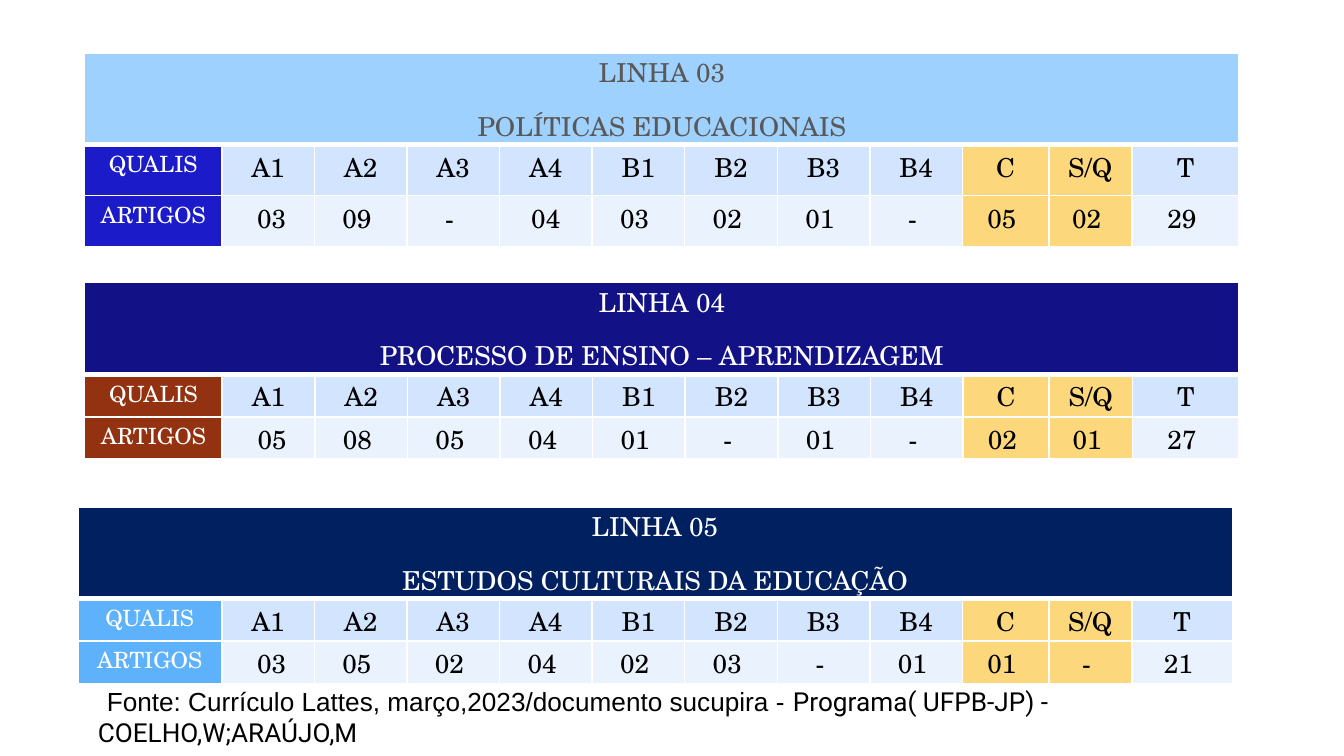
from dataclasses import dataclass

from lxml.etree import SubElement
from pptx import Presentation
from pptx.dml.color import RGBColor
from pptx.enum.text import MSO_AUTO_SIZE, PP_ALIGN
from pptx.oxml.ns import qn
from pptx.util import Cm, Pt

TABLE_FONT = "TeX Gyre Schola"
GRADES = ["A1", "A2", "A3", "A4", "B1", "B2", "B3", "B4", "C", "S/Q", "T"]
HIGHLIGHTED = ("C", "S/Q")
TABLE_WIDTH = 21.82
GRADE_WIDTHS = [1.75] * 8 + [1.63, 1.57]
TITLE_HEIGHT = 1.72
SIDE_MARGIN = 0.16
VALUE_SHIFT = 0.14


@dataclass
class ResearchLine:
    """Content and look of one research line's table."""
    titles: list
    counts: list
    left: float
    top: float
    label_width: float
    row_height: float
    title_fill: str
    title_color: str
    label_fill: str
    centred_grades: tuple = ()


RESEARCH_LINES = [
    ResearchLine(["LINHA 03", "POLÍTICAS EDUCACIONAIS"],
                 ["03", "09", "-", "04", "03", "02", "01", "-", "05", "02", "29"],
                 1.6, 1.0, 2.59, 0.96, "9ED1FD", "595959", "1B1BC9", ("A4",)),
    ResearchLine(["LINHA 04", "PROCESSO DE ENSINO – APRENDIZAGEM"],
                 ["05", "08", "05", "04", "01", "-", "01", "-", "02", "01", "27"],
                 1.6, 5.34, 2.6, 0.8, "121286", "FFFFFF", "923210"),
    ResearchLine(["LINHA 05", "ESTUDOS CULTURAIS DA EDUCAÇÃO"],
                 ["03", "05", "02", "04", "02", "03", "-", "01", "01", "-", "21"],
                 1.47, 9.58, 2.72, 0.8, "002060", "FFFFFF", "5EB2FC"),
]


def rgb(value):
    """Turn a hex string into a colour."""
    return RGBColor.from_string(value)


def format_span(span, font, size, color):
    """Set the font, size and colour of a run."""
    span.font.name = font
    span.font.size = Pt(size)
    span.font.bold = False
    span.font.color.rgb = rgb(color)


def set_borders(cell, bottom=1):
    """Give a cell white borders, with a chosen bottom width in points."""
    properties = cell._tc.get_or_add_tcPr()
    for side, width in (("L", 1), ("R", 1), ("T", 1), ("B", bottom)):
        line = SubElement(properties, qn(f"a:ln{side}"), w=str(Pt(width)))
        fill = SubElement(line, qn("a:solidFill"))
        SubElement(fill, qn("a:srgbClr"), val="FFFFFF")


def style_cell(cell, fill, bottom=1):
    """Set the margins, borders and fill of a cell."""
    cell.margin_left = cell.margin_right = Cm(SIDE_MARGIN)
    cell.margin_top = cell.margin_bottom = 0
    set_borders(cell, bottom)
    cell.fill.solid()
    cell.fill.fore_color.rgb = rgb(fill)


def write_cell(cell, text, size, color, spacing=None):
    """Write centred paragraphs in a cell."""
    cell.text_frame.text = text
    for para in cell.text_frame.paragraphs:
        para.alignment = PP_ALIGN.CENTER
        para.space_after = Pt(8)
        para.line_spacing = spacing
        for span in para.runs:
            format_span(span, TABLE_FONT, size, color)


def fill_row(table, row, label, values, line, fill):
    """Fill one labelled row of grades or counts."""
    label_cell = table.cell(row, 0)
    style_cell(label_cell, line.label_fill)
    write_cell(label_cell, label, 12, "FFFFFF", 1.07)
    for column, (grade, value) in enumerate(zip(GRADES, values), start=1):
        cell = table.cell(row, column)
        style_cell(cell, "FDD77C" if grade in HIGHLIGHTED else fill)
        write_cell(cell, value, 14, "000000", 1.07)


def shift_counts(table, line):
    """Move the first count slightly right and the others slightly left."""
    wide_margin = Cm(SIDE_MARGIN + VALUE_SHIFT)
    for column, grade in enumerate(GRADES, start=1):
        cell = table.cell(2, column)
        if column == 1:
            cell.margin_left = wide_margin
        elif grade not in line.centred_grades:
            cell.margin_right = wide_margin


def add_line_table(slide, line):
    """Add the table of one research line."""
    heights = [TITLE_HEIGHT, line.row_height, line.row_height]
    widths = [line.label_width, *GRADE_WIDTHS]
    widths.append(TABLE_WIDTH - sum(widths))
    frame = slide.shapes.add_table(len(heights), len(widths), Cm(line.left), Cm(line.top),
                                   Cm(TABLE_WIDTH), Cm(sum(heights)))
    table = frame.table
    table.first_row = table.horz_banding = False
    for column, width in zip(table.columns, widths):
        column.width = Cm(width)
    for row, height in zip(table.rows, heights):
        row.height = Cm(height)
    for cell in table.rows[0].cells:
        style_cell(cell, line.title_fill, bottom=3)
    title_cell = table.cell(0, 0)
    title_cell.merge(table.cell(0, len(widths) - 1))
    write_cell(title_cell, "\n".join(line.titles), 14, line.title_color)
    fill_row(table, 1, "QUALIS", GRADES, line, "D2E4FE")
    fill_row(table, 2, "ARTIGOS", line.counts, line, "EAF2FE")
    shift_counts(table, line)


def add_source_note(slide):
    """Add the source note below the tables."""
    box = slide.shapes.add_textbox(Cm(1.6), Cm(12.83), Cm(23.06), Cm(1.45))
    box.text_frame.word_wrap = True
    box.text_frame.auto_size = MSO_AUTO_SIZE.SHAPE_TO_FIT_TEXT
    para = box.text_frame.paragraphs[0]
    para._p.get_or_add_pPr().set("indent", str(Cm(0.17)))
    for text, font in (("Fonte: Currículo Lattes, março,2023/documento sucupira - ", "Arial"),
                       ("Programa( UFPB-JP) - COELHO,W;ARAÚJO,M", "Roboto")):
        span = para.add_run()
        span.text = text
        format_span(span, font, 14, "000000")


def main():
    """Build and save the deck."""
    deck = Presentation()
    deck.slide_width, deck.slide_height = Cm(25.4), Cm(14.29)
    slide = deck.slides.add_slide(deck.slide_layouts[6])
    for line in RESEARCH_LINES:
        add_line_table(slide, line)
    add_source_note(slide)
    deck.save("out.pptx")


if __name__ == "__main__":
    main()
